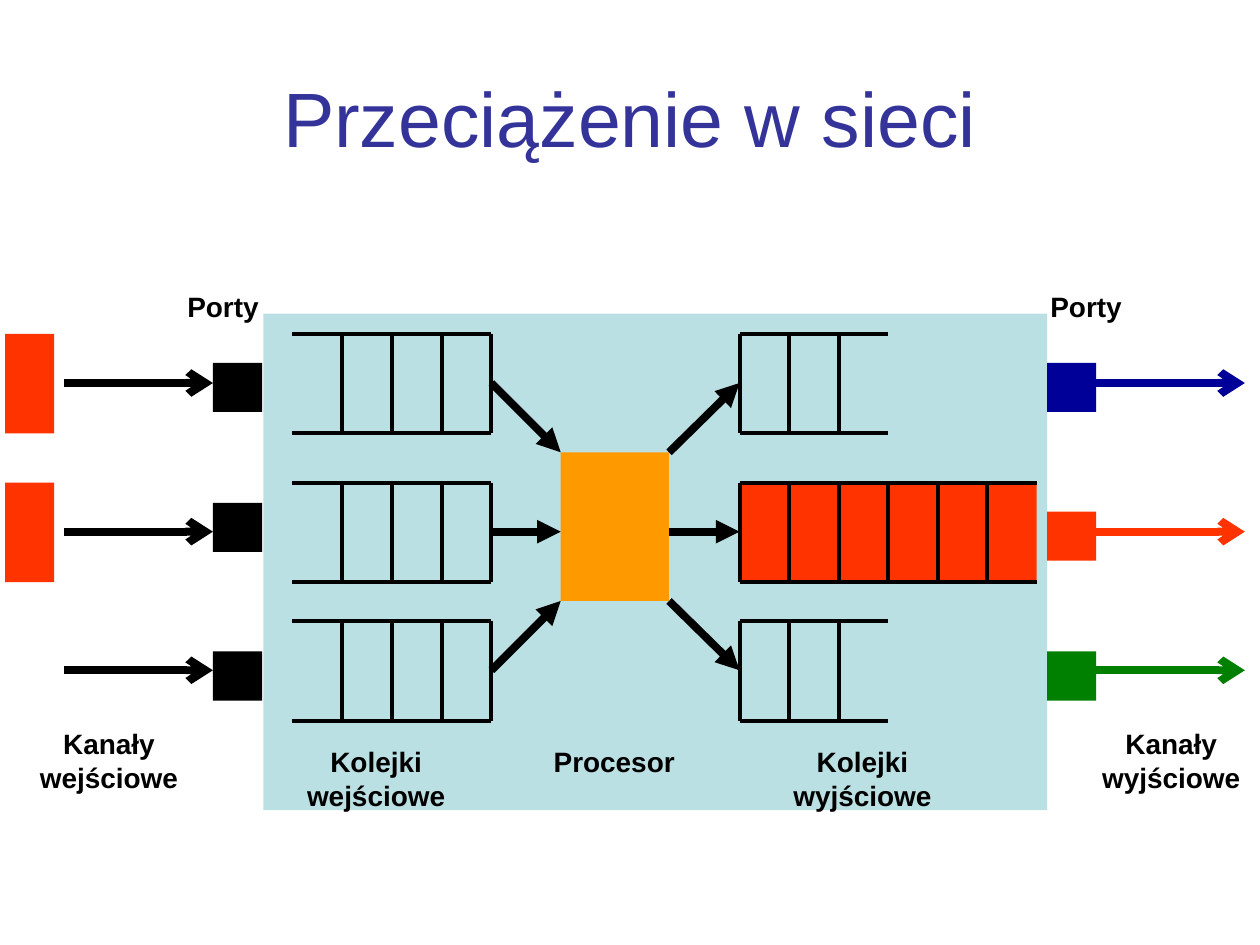
from lxml import etree
from pptx import Presentation
from pptx.dml.color import RGBColor
from pptx.enum.shapes import MSO_CONNECTOR, MSO_SHAPE
from pptx.enum.text import MSO_ANCHOR, PP_ALIGN
from pptx.oxml.ns import qn
from pptx.util import Inches, Pt

LINE, RECT = MSO_CONNECTOR.STRAIGHT, MSO_SHAPE.RECTANGLE
TOP, MID = MSO_ANCHOR.TOP, MSO_ANCHOR.MIDDLE
BLACK, RED, BLUE, GREEN = "000000", "FF3300", "000099", "008000"
TEAL, ORANGE, INDIGO = "BBE0E3", "FF9900", "333399"

TITLE = "Przeciążenie w sieci"
LABELS = [  # text, left, top, width, height
    ("Kolejki wejściowe", 2.24, 5.86, 1.49, 0.64),
    ("Kolejki wyjściowe", 6.02, 5.86, 1.65, 0.64),
    ("Procesor", 4.13, 5.86, 1.49, 0.37),
    ("Porty", 7.99, 2.25, 1.26, 0.37),
    ("Porty", 1.14, 2.25, 1.26, 0.37),
    ("Kanały wejściowe", 0.12, 5.72, 1.49, 0.64),
    ("Kanały wyjściowe", 8.55, 5.72, 1.49, 0.64),
]
ROWS = [  # queue top, input port top, output port top, output colour, cells, full
    (2.65, 2.88, 2.88, BLUE, 3, False),
    (3.83, 3.99, 4.06, RED, 6, True),
    (4.93, 5.17, 5.17, GREEN, 3, False),
]
PACKETS = [2.65, 3.83]  # tops of the packets waiting at the inputs

ROUTER = (2.09, 2.49, 6.22, 3.94)
CPU = (4.45, 3.59, 0.86, 1.18)
CPU_L, CPU_R = CPU[0], CPU[0] + CPU[2]
CPU_T, CPU_B = CPU[1], CPU[1] + CPU[3]
PORT = 0.39
IN_PORT, OUT_PORT = 1.69, 8.31
IN_L, IN_R, IN_CELLS = 2.32, 3.9, 4
OUT_L, OUT_CELL = 5.87, 0.393
TALL = 0.79

deck = Presentation()
deck.slide_width, deck.slide_height = Inches(10), Inches(7.5)
slide = deck.slides.add_slide(deck.slide_layouts[6])
shapes = slide.shapes


def color(code):
    return RGBColor.from_string(code)


def rect(left, top, width, height, fill):
    box = shapes.add_shape(RECT, *map(Inches, (left, top, width, height)))
    box.shadow.inherit = False
    box.fill.solid()
    box.fill.fore_color.rgb = color(fill)
    box.line.fill.background()


def line(x1, y1, x2, y2, ink=BLACK, width=2.25, head=None):
    link = shapes.add_connector(LINE, *map(Inches, (x1, y1, x2, y2)))
    link.line.color.rgb = color(ink)
    link.line.width = Pt(width)
    if head:
        etree.SubElement(link.line._get_or_add_ln(), qn("a:tailEnd"), type=head)
    etree.SubElement(link._element.spPr, qn("a:effectLst"))


def arrow(x1, y1, x2, y2, ink=BLACK, head="triangle"):
    line(x1, y1, x2, y2, ink, 4.5, head)


def text(words, left, top, width, height, size=16, ink=BLACK, bold=True, anchor=TOP):
    frame = shapes.add_textbox(*map(Inches, (left, top, width, height))).text_frame
    frame.word_wrap = True
    frame.vertical_anchor = anchor
    para = frame.paragraphs[0]
    para.alignment = PP_ALIGN.CENTER
    run = para.add_run()
    run.text = words
    run.font.name, run.font.size, run.font.bold = "Arial", Pt(size), bold
    run.font.color.rgb = color(ink)


def queue(left, right, top, walls):
    """Draw two rails and the upright walls between them."""
    for y in (top, top + TALL):
        line(left, y, right, y)
    for x in walls:
        line(x, top, x, top + TALL)


text(TITLE, 0.5, 0.3, 9, 1.25, size=44, ink=INDIGO, bold=False, anchor=MID)
rect(*ROUTER, TEAL)
rect(*CPU, ORANGE)
for top in PACKETS:
    rect(0.04, top, PORT, TALL, RED)

in_cell = (IN_R - IN_L) / IN_CELLS
for (top, in_top, out_top, ink, cells, full), cpu_y in zip(
        ROWS, (CPU_T, ROWS[1][0] + PORT, CPU_B)):
    mid = top + PORT
    rect(IN_PORT, in_top, PORT, PORT, BLACK)
    rect(OUT_PORT, out_top, PORT, PORT, ink)
    queue(IN_L, IN_R, top, [IN_L + in_cell * i for i in range(1, IN_CELLS + 1)])
    walls = [OUT_L + OUT_CELL * i for i in range(cells)]
    if full:
        for x in walls:
            rect(x, top, OUT_CELL, TALL, RED)
    queue(OUT_L, OUT_L + OUT_CELL * cells, top, walls)
    arrow(0.51, mid, IN_PORT, mid, head="arrow")
    arrow(OUT_PORT + PORT, mid, 9.88, mid, ink, "arrow")
    arrow(IN_R, mid, CPU_L, cpu_y)
    arrow(CPU_R, cpu_y, OUT_L, mid)

for label in LABELS:
    text(*label)

deck.save("out.pptx")
